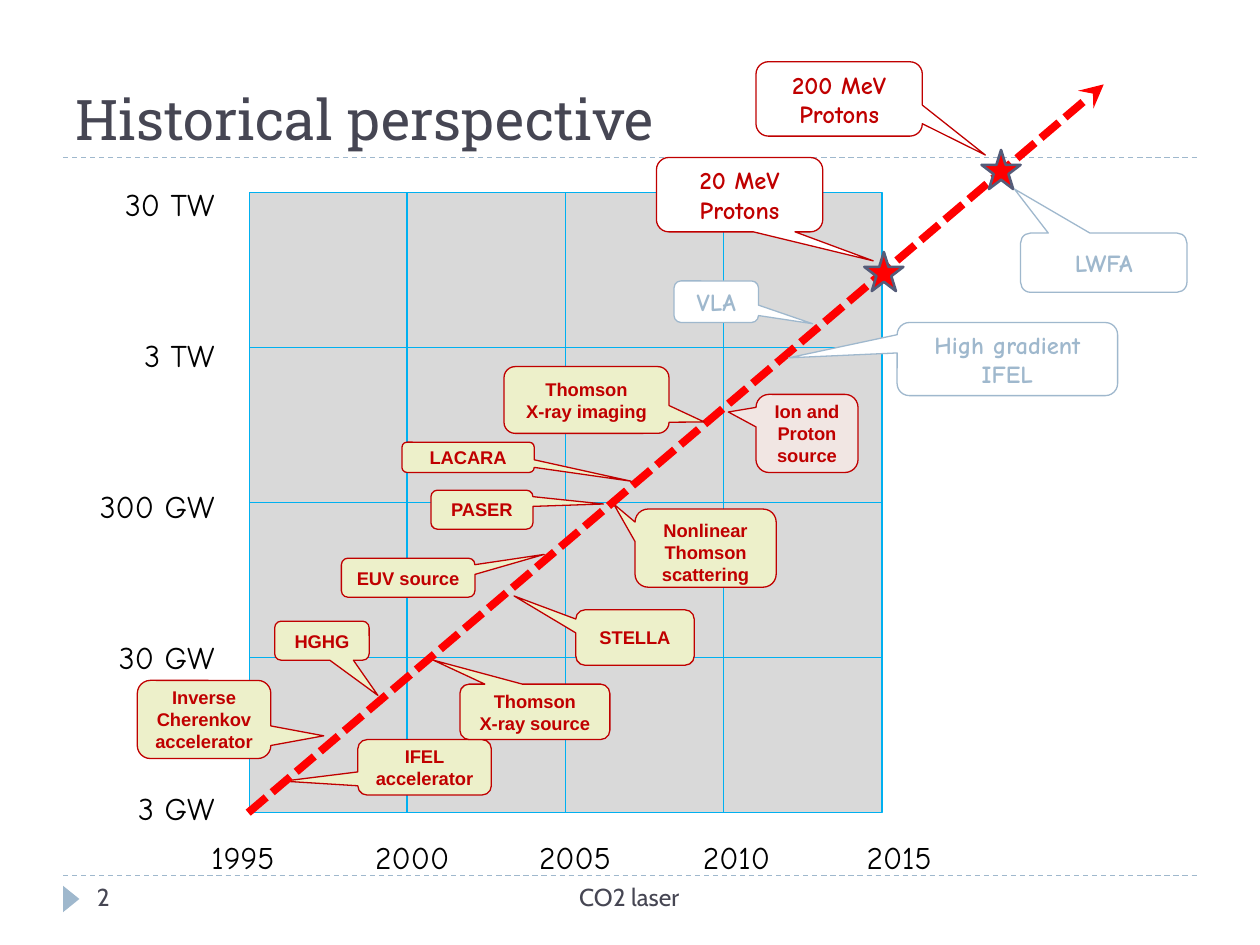
"""Build the slide on the historical growth of CO2 laser power."""
from dataclasses import dataclass

from lxml import etree
from pptx import Presentation
from pptx.dml.color import RGBColor
from pptx.enum.dml import MSO_LINE
from pptx.enum.shapes import MSO_CONNECTOR, MSO_SHAPE
from pptx.enum.text import MSO_ANCHOR, PP_ALIGN
from pptx.oxml.ns import qn
from pptx.util import Pt

PX = 9144
STRAIGHT = MSO_CONNECTOR.STRAIGHT
CALLOUT = MSO_SHAPE.ROUNDED_RECTANGULAR_CALLOUT
RECTANGLE, STAR, TRIANGLE = MSO_SHAPE.RECTANGLE, MSO_SHAPE.STAR_5_POINT, MSO_SHAPE.ISOSCELES_TRIANGLE
DASH, DOTS = MSO_LINE.DASH, MSO_LINE.SQUARE_DOT
LEFT, CENTER, RIGHT = PP_ALIGN.LEFT, PP_ALIGN.CENTER, PP_ALIGN.RIGHT
TOP, MIDDLE, BOTTOM = MSO_ANCHOR.TOP, MSO_ANCHOR.MIDDLE, MSO_ANCHOR.BOTTOM


@dataclass(frozen=True)
class TextStyle:
    font: str
    size: float
    color: str
    bold: bool = False


@dataclass(frozen=True)
class CalloutStyle:
    fill: str
    line: str
    text: TextStyle


class Theme:
    blue_gray = "9FB8CD"
    red = "C00000"
    trend = "FF0000"
    plot = "D9D9D9"
    grid = "00B0F0"
    star_line = "545C79"
    title = TextStyle("Roboto Slab", 32, "464653")
    footer = TextStyle("Cabin", 14, "464653")
    axis = TextStyle("Comic Neue", 18, "000000")
    label = TextStyle("Arial", 10.5, red, True)
    past = CalloutStyle("EDF0CA", red, label)
    ion = CalloutStyle("F1E6E3", red, label)
    proton = CalloutStyle("FFFFFF", red, TextStyle("Comic Neue", 14, red, True))
    future = CalloutStyle("FFFFFF", blue_gray, TextStyle("Comic Neue", 14, blue_gray, True))


class SlideBuilder:
    def __init__(self, page, theme):
        self.page = page
        self.theme = theme

    def set_text(self, shape, text, style, align, anchor, gap=0):
        frame = shape.text_frame
        frame.word_wrap = True
        frame.vertical_anchor = anchor
        frame.text = text
        for index, para in enumerate(frame.paragraphs):
            para.alignment = align
            if index and gap:
                para.space_before = Pt(gap)
            for span in para.runs:
                span.font.name = style.font
                span.font.size = Pt(style.size)
                span.font.bold = style.bold
                span.font.color.rgb = RGBColor.from_string(style.color)

    def text(self, bounds, text, style, align=LEFT, anchor=TOP, gap=0):
        box = self.page.shapes.add_textbox(*(n * PX for n in bounds))
        self.set_text(box, text, style, align, anchor, gap)
        return box

    def tabbed_text(self, bounds, words, style, step):
        box = self.text(bounds, "\t".join(words), style)
        properties = box.text_frame.paragraphs[0]._p.get_or_add_pPr()
        stops = etree.SubElement(properties, qn("a:tabLst"))
        for index in range(1, len(words)):
            etree.SubElement(stops, qn("a:tab"), pos=str(index * step * PX), algn="l")

    def shape(self, kind, bounds, fill, line=None, width=0.75):
        shape = self.page.shapes.add_shape(kind, *(n * PX for n in bounds))
        shape.shadow.inherit = False
        shape.fill.solid()
        shape.fill.fore_color.rgb = RGBColor.from_string(fill)
        if line:
            shape.line.color.rgb = RGBColor.from_string(line)
            shape.line.width = Pt(width)
        else:
            shape.line.fill.background()
        return shape

    def callout(self, bounds, tip, text, style, anchor=MIDDLE):
        left, top, width, height = bounds
        shape = self.shape(CALLOUT, bounds, style.fill, style.line)
        shape.adjustments[0] = (tip[0] - left) / width - 0.5
        shape.adjustments[1] = (tip[1] - top) / height - 0.5
        self.set_text(shape, text, style.text, CENTER, anchor)

    def line(self, start, end, color, width=0.75, dash=None, arrow=None):
        line = self.page.shapes.add_connector(STRAIGHT, *(n * PX for n in (*start, *end)))
        line.line.color.rgb = RGBColor.from_string(color)
        line.line.width = Pt(width)
        if dash:
            line.line.dash_style = dash
        if arrow:
            etree.SubElement(line.line._get_or_add_ln(), qn("a:tailEnd"), type=arrow)
        etree.SubElement(line._element.spPr, qn("a:effectLst"))
        return line

    def grid(self, bounds, parts):
        left, top, width, height = bounds
        plot = self.shape(RECTANGLE, bounds, self.theme.plot, self.theme.grid)
        for index in range(1, parts):
            x = left + width * index // parts
            y = top + height * index // parts
            column = self.line((x, top), (x, top + height), self.theme.grid)
            row = self.line((left, y), (left + width, y), self.theme.grid)
            if 2 * index == parts:
                column.begin_connect(plot, 0)
                column.end_connect(plot, 2)
                row.begin_connect(plot, 1)
                row.end_connect(plot, 3)


EARLY = [
    ((109, 540, 106, 62), (257, 584), "Inverse\nCherenkov\naccelerator"),
    ((284, 587, 106, 44), (225, 620), "IFEL\naccelerator"),
    ((365, 543, 119, 44), (344, 524), "Thomson\nX-ray source"),
    ((218, 493, 75, 31), (300, 552), "HGHG"),
    ((457, 484, 94, 44), (408, 473), "STELLA"),
    ((271, 443, 106, 31), (432, 440), "EUV source"),
    ((342, 389, 81, 31), (479, 400), "PASER"),
]
LATE = [
    ((600, 313, 81, 62), (578, 327), "Ion and\nProton\nsource", Theme.ion),
    ((400, 291, 131, 53), (559, 335), "Thomson\nX-ray imaging", Theme.past),
    ((319, 351, 105, 24), (501, 382), "LACARA", Theme.past),
    ((600, 49, 132, 59), (782, 123), "200 MeV Protons", Theme.proton),
    ((810, 185, 132, 47), (805, 150), "LWFA", Theme.future),
    ((712, 256, 175, 58), (626, 284), "High gradient IFEL", Theme.future),
    ((521, 125, 132, 59), (693, 207), "20 MeV Protons", Theme.proton),
    ((535, 223, 67, 33), (645, 257), "VLA", Theme.future),
]
POWERS = ["30 TW", "3 TW", "300 GW", "30 GW", "3 GW"]
YEARS = [str(year) for year in range(1995, 2016, 5)]


def main():
    deck = Presentation()
    deck.slide_width, deck.slide_height = 1000 * PX, 750 * PX
    theme = Theme()
    slide = SlideBuilder(deck.slides.add_slide(deck.slide_layouts[6]), theme)

    for y in (695, 125):
        slide.line((50, y), (950, y), theme.blue_gray, dash=DASH)
    slide.shape(TRIANGLE, (46, 707, 21, 13), theme.blue_gray).rotation = 90
    slide.grid((198, 153, 502, 492), 4)
    slide.text((50, 17, 900, 108), "Historical perspective", theme.title, anchor=BOTTOM)
    slide.text((183, 695, 633, 40), "CO2 laser", theme.footer, CENTER)
    slide.text((67, 695, 108, 40), "2", theme.footer)
    slide.tabbed_text((158, 660, 626, 40), YEARS, theme.axis, 130)
    slide.text((58, 142, 122, 525), "\n".join(POWERS), theme.axis, RIGHT, gap=64.7)

    for bounds, tip, text in EARLY:
        slide.callout(bounds, tip, text, theme.past)
    slide.callout((504, 404, 112, 62), (487, 400), "Nonlinear Thomson\nscattering", theme.past, TOP)
    slide.line((197, 645), (876, 67), theme.trend, 4.5, DOTS, "stealth")
    for left, top in ((779, 119), (686, 200)):
        slide.shape(STAR, (left, top, 31, 31), theme.trend, theme.star_line, 1.5)
    for bounds, tip, text, style in LATE:
        slide.callout(bounds, tip, text, style)

    deck.save("out.pptx")


if __name__ == "__main__":
    main()
